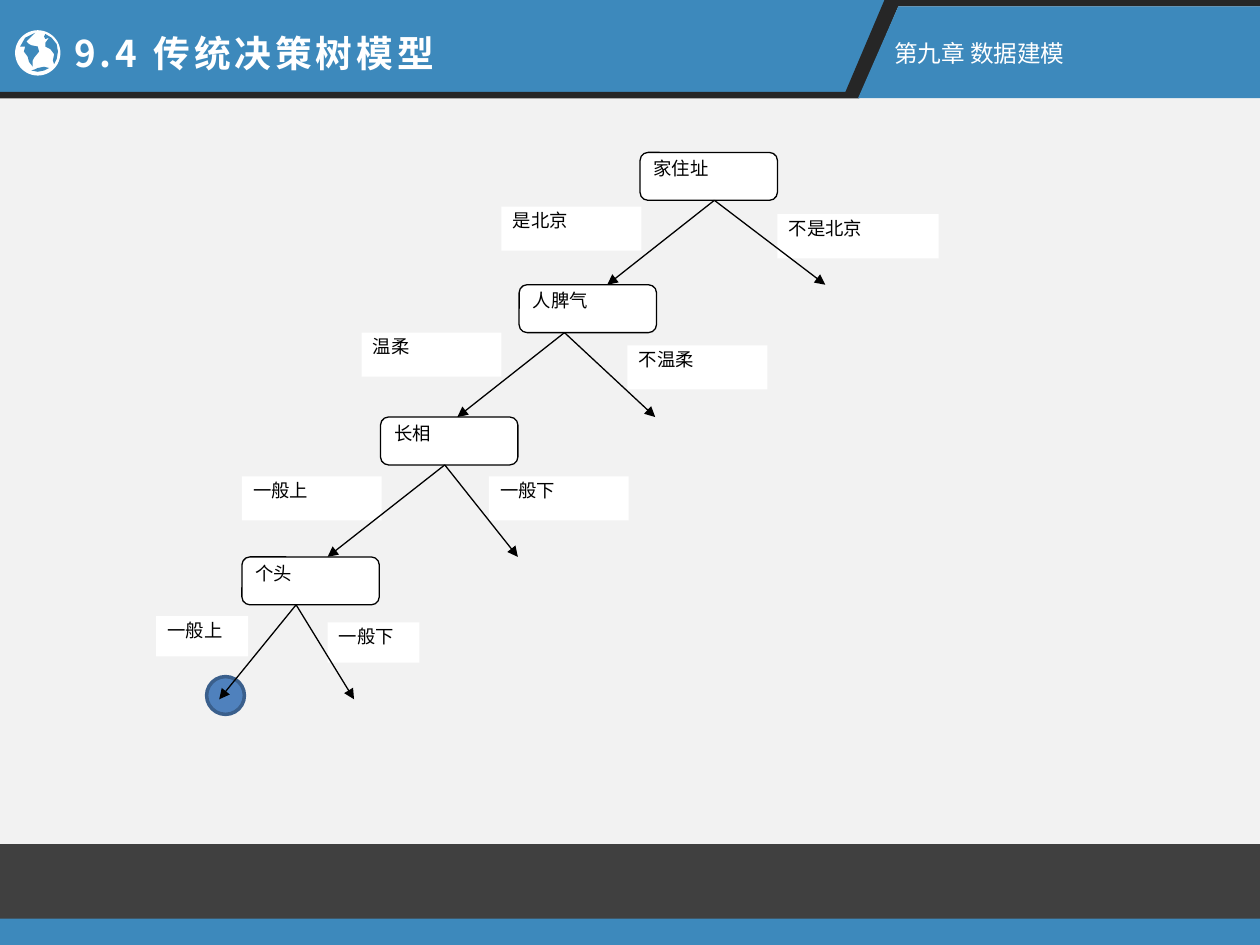
import pptx
import pptx.dml.color
import pptx.enum.shapes
import pptx.enum.text
import pptx.oxml
import pptx.oxml.ns
import pptx.util

FONT = "Noto Sans CJK SC"
BLUE, DARK, WHITE, BLACK = "3D89BC", "262626", "FFFFFF", "000000"
COLUMNS, ROWS = 100, 75
SHAPES = pptx.enum.shapes.MSO_SHAPE


def color(value):
    return pptx.dml.color.RGBColor.from_string(value)


def write(shape, text, size=10.5, ink=BLACK, bold=False, spacing=0, wrap=True,
          align="JUSTIFY", anchor="TOP", inset=(0.09, 0.02)):
    frame = shape.text_frame
    frame.word_wrap = wrap
    frame.auto_size = pptx.enum.text.MSO_AUTO_SIZE.NONE
    frame.vertical_anchor = getattr(pptx.enum.text.MSO_ANCHOR, anchor)
    frame.margin_left = frame.margin_right = pptx.util.Inches(inset[0])
    frame.margin_top = frame.margin_bottom = pptx.util.Inches(inset[1])
    paragraph = frame.paragraphs[0]
    paragraph.alignment = getattr(pptx.enum.text.PP_ALIGN, align)
    run = paragraph.add_run()
    run.text = text
    run.font.size = pptx.util.Pt(size)
    run.font.bold = bold
    run.font.color.rgb = color(ink)
    run.font.name = FONT
    properties = run.font._element
    properties.set("spc", str(round(spacing * 100)))
    latin = properties.find(pptx.oxml.ns.qn("a:latin"))
    latin.addnext(pptx.oxml.parse_xml(
        f'<a:ea {pptx.oxml.ns.nsdecls("a")} typeface="{FONT}"/>'))


class SlideBuilder:
    def __init__(self, presentation, background):
        self.slide = presentation.slides.add_slide(presentation.slide_layouts[5])
        self.column = presentation.slide_width / COLUMNS
        self.row = presentation.slide_height / ROWS
        self.slide.background.fill.solid()
        self.slide.background.fill.fore_color.rgb = color(background)

    def place(self, left, top, width, height):
        return (round(left * self.column), round(top * self.row),
                round(width * self.column), round(height * self.row))

    def paint(self, shape, fill, line=None, weight=0.75):
        shape.shadow.inherit = False
        shape.fill.solid()
        shape.fill.fore_color.rgb = color(fill)
        if line:
            shape.line.color.rgb = color(line)
            shape.line.width = pptx.util.Pt(weight)
        else:
            shape.line.fill.background()
        return shape

    def shape(self, kind, box, fill, line=None, weight=0.75):
        shape = self.slide.shapes.add_shape(kind, *self.place(*box))
        return self.paint(shape, fill, line, weight)

    def polygon(self, points, fill):
        corners = [(x * self.column, y * self.row) for x, y in points]
        builder = self.slide.shapes.build_freeform(*corners[0])
        builder.add_line_segments(corners[1:])
        return self.paint(builder.convert_to_shape(), fill)

    def title(self, text, box, **style):
        title = self.slide.shapes.title
        title.left, title.top, title.width, title.height = self.place(*box)
        write(title, text, **style)
        self.slide.shapes._spTree.append(title._element)

    def text(self, text, box, **style):
        write(self.slide.shapes.add_textbox(*self.place(*box)), text, **style)

    def label(self, text, box):
        write(self.shape(SHAPES.RECTANGLE, box, WHITE), text)

    def node(self, text, left, top):
        box = (left, top, 10.9, 3.8)
        shape = self.shape(SHAPES.FLOWCHART_ALTERNATE_PROCESS, box, WHITE, BLACK)
        write(shape, text)

    def arrow(self, start, end):
        connector = self.slide.shapes.add_connector(
            pptx.enum.shapes.MSO_CONNECTOR.STRAIGHT,
            *self.place(*start, *end))
        connector.line.color.rgb = color(BLACK)
        connector.line.width = pptx.util.Pt(0.75)
        namespace = pptx.oxml.ns.nsdecls("a")
        connector.line._get_or_add_ln().append(
            pptx.oxml.parse_xml(f'<a:tailEnd {namespace} type="triangle"/>'))
        connector._element.spPr.append(
            pptx.oxml.parse_xml(f'<a:effectLst {namespace}/>'))


HEADER = [
    (BLUE, [(0, 0), (70.5, 0), (67.4, 7.3), (0, 7.3)]),
    (DARK, [(70.2, 0), (100, 0), (100, 0.5), (71.3, 0.5), (68.2, 7.8),
            (0, 7.8), (0, 7.3), (67.1, 7.3)]),
    (BLUE, [(71.3, 0.5), (100, 0.5), (100, 7.8), (68.1, 7.8)]),
]

CONTINENTS = [
    [(4.6, 4.1), (4.5, 4.7), (4.3, 5.1), (4.2, 4.8), (4.3, 4.3), (4, 3.9),
     (3.6, 3.7), (3.6, 3.4), (3.9, 3), (3.6, 3.1), (3.5, 2.9), (3.6, 2.7),
     (4.1, 3), (4.5, 3.5)],
    [(2.8, 2.6), (2.6, 2.8), (2.4, 3), (2.1, 3.3), (2.3, 3.5), (2.5, 3.6),
     (3, 3.7), (3.1, 4.1), (2.7, 4.6), (2.6, 4.8), (2.6, 5.3), (2.3, 4.9),
     (2.2, 4.5), (1.9, 4.1), (2, 3.7), (1.6, 3.7), (2, 3)],
    [(2.5, 5.6), (2.8, 5.5), (3, 5.4), (3.5, 5.3), (3.9, 5.4), (3.5, 5.6),
     (3, 5.7)],
]

LABELS = [
    ("是北京", (39.8, 16.4, 11.1, 3.5)), ("不是北京", (61.7, 17, 12.8, 3.5)),
    ("温柔", (28.7, 26.4, 11.1, 3.5)), ("不温柔", (49.8, 27.4, 11.1, 3.5)),
    ("一般上", (19.2, 37.8, 11.1, 3.5)), ("一般下", (38.8, 37.8, 11.1, 3.5)),
    ("一般上", (12.4, 48.9, 7.3, 3.2)), ("一般下", (26, 49.4, 7.3, 3.2)),
]

NODES = [
    ("家住址", 50.8, 12.1, 56.7, (48.2, 65.5), 22.6),
    ("人脾气", 41.2, 22.6, 44.8, (36.3, 52), 33.1),
    ("长相", 30.2, 33.1, 35.3, (26, 41.1), 44.2),
    ("个头", 19.2, 44.2, 23.5, (17.4, 28.1), 55.5),
]


def main():
    presentation = pptx.Presentation()
    presentation.slide_width = pptx.util.Inches(10)
    presentation.slide_height = pptx.util.Inches(7.5)
    builder = SlideBuilder(presentation, "F2F2F2")

    builder.shape(SHAPES.RECTANGLE, (0, 67, 100, 6), "404040")
    builder.shape(SHAPES.RECTANGLE, (0, 72.9, 100, 2.1), BLUE)
    for fill, points in HEADER:
        builder.polygon(points, fill)
    builder.shape(SHAPES.OVAL, (1.2, 2.4, 3.6, 3.6), WHITE)
    for points in CONTINENTS:
        builder.polygon(points, BLUE)
    heading = dict(ink=WHITE, wrap=False, align="LEFT", anchor="MIDDLE",
                   inset=(0.1, 0))
    builder.title("9.4 传统决策树模型", (4.9, 1.9, 31.5, 4.5), size=21,
                  bold=True, spacing=2.2, **heading)
    builder.text("第九章 数据建模", (70, 2.6, 15.8, 3.3), size=13.5, **heading)

    for text, box in LABELS:
        builder.label(text, box)
    builder.shape(SHAPES.OVAL, (16.4, 53.7, 3, 3), "4F81BD", "3A5F8C", 2)
    for text, left, top, fork, tips, tip_row in NODES:
        builder.node(text, left, top)
        for tip in tips:
            builder.arrow((fork, top + 3.8), (tip, tip_row))

    presentation.save("out.pptx")


if __name__ == "__main__":
    main()
